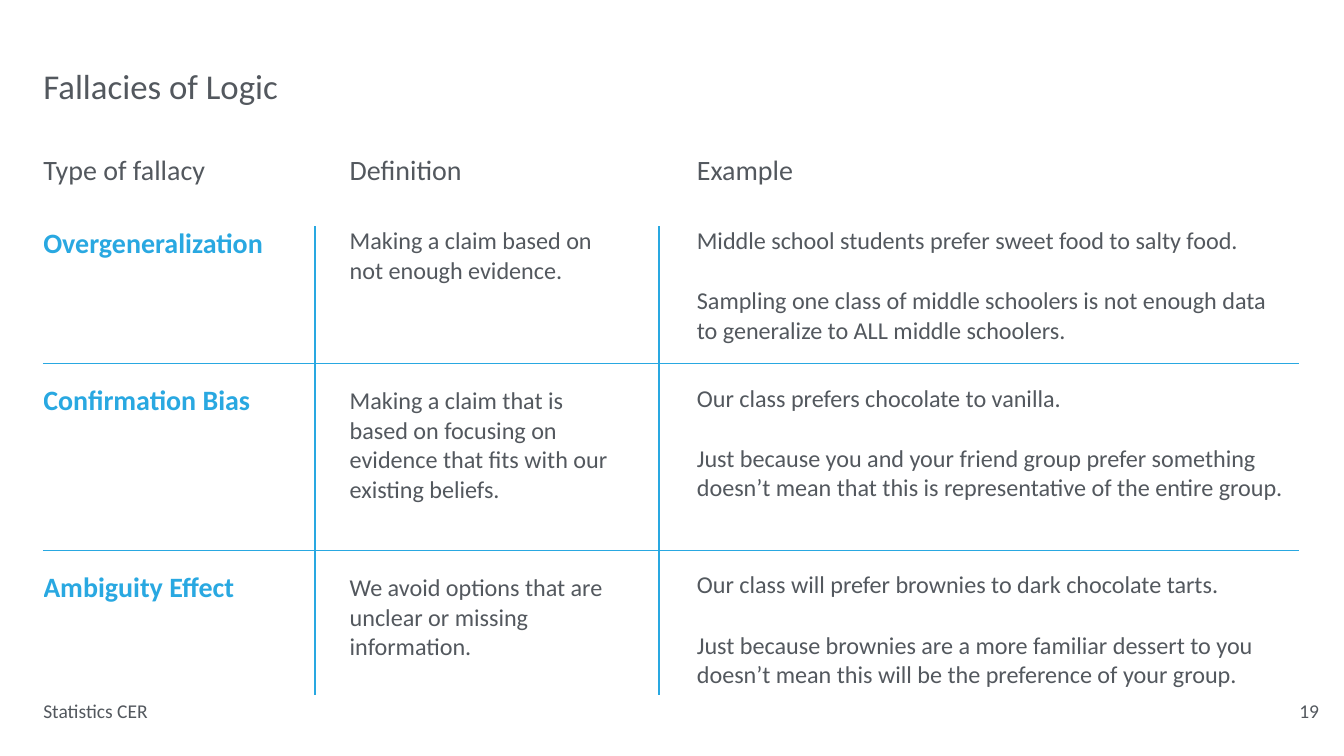
from dataclasses import dataclass

from lxml.etree import SubElement
from pptx import Presentation
from pptx.dml.color import RGBColor
from pptx.enum.text import MSO_ANCHOR, MSO_AUTO_SIZE, PP_ALIGN
from pptx.oxml.ns import qn
from pptx.slide import Slide
from pptx.table import Table, _Cell
from pptx.text.text import TextFrame
from pptx.util import Pt

GREY = "53585E"
BLUE = "29A8E1"
TABLE_LEFT, TABLE_TOP = 51, 267.1


@dataclass
class Column:
    heading: str
    heading_width: float
    width: float
    inset_left: float
    inset_right: float
    inset_top: float  # for every row but the first
    size: float = 28.5
    color: str = GREY
    bold: bool = False
    gap: float = 0  # between paragraphs


@dataclass
class Fallacy:
    height: float
    name: str
    definition: str
    example: str


COLUMNS = [
    Column("Type of fallacy", 191, 320, 0, 0, 24, size=33, color=BLUE, bold=True),
    Column("Definition", 136, 405, 41, 48, 27),
    Column("Example", 115, 754, 45, 14, 24, gap=36),
]

FALLACIES = [
    Fallacy(
        161.3,
        "Overgeneralization",
        "Making a claim based on\nnot enough evidence.",
        "Middle school students prefer sweet food to salty food.\n"
        "Sampling one class of middle schoolers is not enough data "
        "to generalize to ALL middle schoolers.",
    ),
    Fallacy(
        220.3,
        "Confirmation Bias",
        "Making a claim that is based on focusing on evidence "
        "that fits with our existing beliefs.",
        "Our class prefers chocolate to vanilla.\n"
        "Just because you and your friend group prefer something "
        "doesn’t mean that this is representative of the entire group.",
    ),
    Fallacy(
        170.6,
        "Ambiguity Effect",
        "We avoid options that are unclear or missing information.",
        "Our class will prefer brownies to dark chocolate tarts.\n"
        "Just because brownies are a more familiar dessert to you "
        "doesn’t mean this will be the preference of your group.",
    ),
]


def write(frame: TextFrame, text: str, size: float, color: str = GREY,
          bold: bool = False, gap: float = 0) -> None:
    frame.text = text
    for index, paragraph in enumerate(frame.paragraphs):
        paragraph.alignment = PP_ALIGN.LEFT
        paragraph.space_before = Pt(gap if index else 0)
        font = paragraph.font
        font.name = "Calibri"
        font.size = Pt(size)
        font.bold = bold
        font.color.rgb = RGBColor.from_string(color)


def set_insets(box: TextFrame | _Cell, left: float = 0, top: float = 0,
               right: float = 0) -> None:
    box.margin_left, box.margin_top = Pt(left), Pt(top)
    box.margin_right, box.margin_bottom = Pt(right), Pt(0)
    box.vertical_anchor = MSO_ANCHOR.TOP


def add_label(slide: Slide, text: str, left: float, top: float, width: float,
              height: float, size: float, wrap: bool = False) -> None:
    label = slide.shapes.add_textbox(Pt(left), Pt(top), Pt(width), Pt(height))
    label.text_frame.word_wrap = wrap
    set_insets(label.text_frame)
    write(label.text_frame, text, size)


def add_border(cell: _Cell, side: str) -> None:
    """Draw a blue line on one side of the cell: L, R, T or B."""
    line = SubElement(cell._tc.get_or_add_tcPr(), qn(f"a:ln{side}"), w=str(Pt(2.25)))
    fill = SubElement(line, qn("a:solidFill"))
    SubElement(fill, qn("a:srgbClr"), val=BLUE)


def fill_cell(table: Table, row: int, col: int, text: str) -> None:
    cell, column = table.cell(row, col), COLUMNS[col]
    inner_sides = {
        "L": col > 0,
        "R": col < len(COLUMNS) - 1,
        "T": row > 0,
        "B": row < len(FALLACIES) - 1,
    }
    for side, is_inner in inner_sides.items():
        if is_inner:
            add_border(cell, side)
    cell.fill.background()
    set_insets(cell, column.inset_left, column.inset_top if row else 0, column.inset_right)
    write(cell.text_frame, text, column.size, column.color, column.bold, column.gap)


def add_fallacy_table(slide: Slide) -> None:
    table = slide.shapes.add_table(
        len(FALLACIES), len(COLUMNS), Pt(TABLE_LEFT), Pt(TABLE_TOP),
        Pt(sum(column.width for column in COLUMNS)),
        Pt(sum(fallacy.height for fallacy in FALLACIES)),
    ).table
    table.first_row = table.horz_banding = False
    for col, column in enumerate(COLUMNS):
        table.columns[col].width = Pt(column.width)
    for row, fallacy in enumerate(FALLACIES):
        table.rows[row].height = Pt(fallacy.height)
        for col, text in enumerate((fallacy.name, fallacy.definition, fallacy.example)):
            fill_cell(table, row, col, text)


def add_headings(slide: Slide) -> None:
    column_left = TABLE_LEFT
    for column in COLUMNS:
        add_label(slide, column.heading, column_left + column.inset_left, 180,
                  column.heading_width, 40, 33, wrap=True)
        column_left += column.width


def add_title(slide: Slide) -> None:
    title = slide.shapes.title
    title.left, title.top, title.width, title.height = Pt(51), Pt(67.7), Pt(705), Pt(58.3)
    title.text_frame.auto_size = MSO_AUTO_SIZE.NONE
    set_insets(title.text_frame, top=8.6)
    write(title.text_frame, "Fallacies of Logic", 41)


def main() -> None:
    presentation = Presentation()
    presentation.slide_width, presentation.slide_height = Pt(1583.28), Pt(890.64)
    slide = presentation.slides.add_slide(presentation.slide_layouts[5])
    add_title(slide)
    add_fallacy_table(slide)
    add_headings(slide)
    add_label(slide, "Statistics CER", 51, 823, 132, 28, 23)
    add_label(slide, "19", 1530.7, 823, 27, 28, 23)
    presentation.save("out.pptx")


if __name__ == "__main__":
    main()
